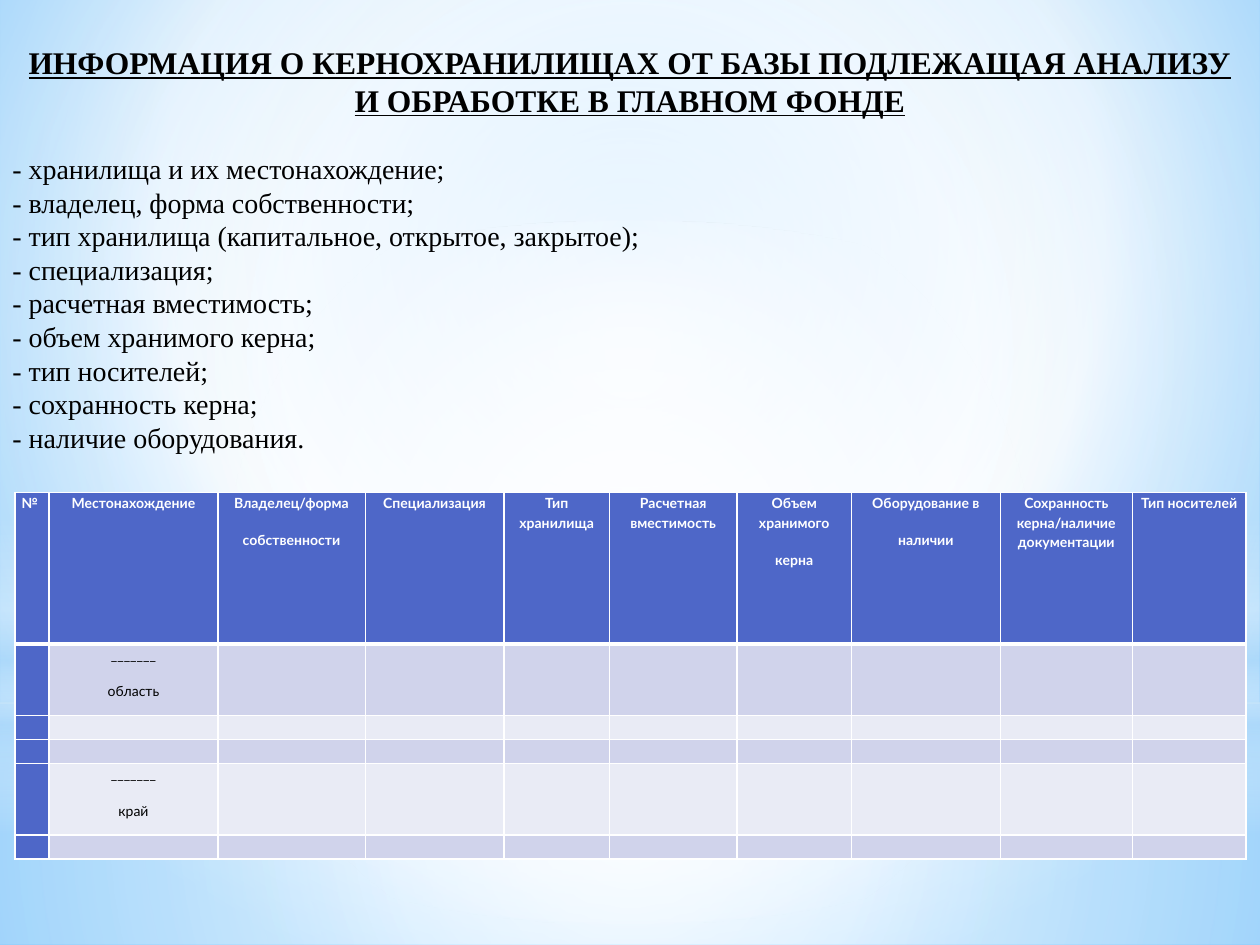
from dataclasses import dataclass

from lxml import etree
from pptx import Presentation
from pptx import util as u
from pptx.dml.color import RGBColor
from pptx.enum import shapes, text
from pptx.oxml.ns import qn


@dataclass(frozen=True)
class Theme:
    heading_font: str = "Times New Roman"
    table_font: str = "Lato"
    heading_size: int = 18
    list_size: int = 16
    table_size: int = 8
    ink: str = "000000"
    white: str = "FFFFFF"
    header: str = "4E67C8"
    bands: tuple = ("D0D3EB", "E9EBF5")
    haze: str = "B4DCFA"
    sky: str = "9ED5FF"
    deep_sky: str = "5BB9FF"


THEME = Theme()
CENTRE = (50, 50, 50, 50)

HEADING = "ИНФОРМАЦИЯ О КЕРНОХРАНИЛИЩАХ ОТ БАЗЫ ПОДЛЕЖАЩАЯ АНАЛИЗУ И ОБРАБОТКЕ В ГЛАВНОМ ФОНДЕ"
REQUIREMENTS = [
    "- хранилища и их местонахождение;",
    "- владелец, форма собственности;",
    "- тип хранилища (капитальное, открытое, закрытое);",
    "- специализация;",
    "- расчетная вместимость;",
    "- объем хранимого керна;",
    "- тип носителей;",
    "- сохранность керна;",
    "- наличие оборудования.",
]
COLUMNS = [
    ("№", 0.27),
    ("Местонахождение", 1.34),
    ("Владелец/форма\nсобственности", 1.17),
    ("Специализация", 1.1),
    ("Тип хранилища", 0.84),
    ("Расчетная вместимость", 1.01),
    ("Объем хранимого\nкерна", 0.91),
    ("Оборудование в\nналичии", 1.18),
    ("Сохранность керна/наличие документации", 1.05),
    ("Тип носителей", 0.9),
]
REGIONS = ["_______\nобласть", "", "", "_______\nкрай", ""]
HEADER_HEIGHT, REGION_HEIGHT, EMPTY_HEIGHT = 1.2, 0.57, 0.19


def paint_gradient(owner, stops, focus=None):
    gradient = etree.Element(qn("a:gradFill"), rotWithShape="1")
    stop_list = etree.SubElement(gradient, qn("a:gsLst"))
    for position, color, opacity in stops:
        stop = etree.SubElement(stop_list, qn("a:gs"), pos=str(position * 1000))
        tone = etree.SubElement(stop, qn("a:srgbClr"), val=color)
        if opacity < 100:
            etree.SubElement(tone, qn("a:alpha"), val=str(opacity * 1000))
    if focus:
        circle = etree.SubElement(gradient, qn("a:path"), path="circle")
        sides = {side: str(share * 1000) for side, share in zip("ltrb", focus)}
        etree.SubElement(circle, qn("a:fillToRect"), **sides)
    else:
        etree.SubElement(gradient, qn("a:lin"), ang="5400000", scaled="0")
    solid = owner.find(".//" + qn("a:solidFill"))
    solid.getparent().replace(solid, gradient)


def add_glow(slide, kind, top, height, stops, focus=None):
    glow = slide.shapes.add_shape(kind, 0, u.Inches(top), u.Inches(10), u.Inches(height))
    glow.shadow.inherit = False
    glow.fill.solid()
    glow.fill.fore_color.rgb = RGBColor.from_string(THEME.white)
    paint_gradient(glow._element.spPr, stops, focus)
    glow.line.fill.background()


def paint_sky(slide):
    white, haze = THEME.white, THEME.haze
    rectangle, ellipse = shapes.MSO_SHAPE.RECTANGLE, shapes.MSO_SHAPE.OVAL
    backdrop = slide.background.fill
    backdrop.solid()
    backdrop.fore_color.rgb = RGBColor.from_string(white)
    paint_gradient(
        slide._element,
        [(0, THEME.sky, 100), (60, white, 100), (100, THEME.deep_sky, 100)],
        (20, 10, 20, 60),
    )
    add_glow(slide, rectangle, 5.58, 1.92,
             [(0, white, 91), (37, white, 76), (100, haze, 79)], CENTRE)
    add_glow(slide, rectangle, 0, 5.58,
             [(0, white, 89), (48, white, 62), (100, haze, 79)], CENTRE)
    add_glow(slide, rectangle, 4.12, 2.5,
             [(0, white, 0), (29, white, 30), (45, haze, 40),
              (55, white, 26), (65, haze, 60), (100, white, 0)])
    add_glow(slide, ellipse, 1.75, 5.58, [(0, white, 100), (56, white, 0)], CENTRE)


def style_font(paragraph, name, size, color, bold=False):
    font = paragraph.font
    font.name = name
    font.size = u.Pt(size)
    font.bold = bold
    font.color.rgb = RGBColor.from_string(color)


def add_requirements(slide):
    box = slide.shapes.add_textbox(0, u.Inches(0.03), u.Inches(10), u.Inches(3.94))
    frame = box.text_frame
    frame.word_wrap = True
    frame.margin_top = u.Inches(0.31)
    frame.text = "\n".join([HEADING, *REQUIREMENTS])
    heading, *requirements = frame.paragraphs
    style_font(heading, THEME.heading_font, THEME.heading_size, THEME.ink, bold=True)
    heading.font.underline = True
    heading.alignment = text.PP_ALIGN.CENTER
    heading.space_after = u.Pt(19)
    for requirement in requirements:
        style_font(requirement, THEME.heading_font, THEME.list_size, THEME.ink)


def draw_borders(cell, widths):
    properties = cell._tc.get_or_add_tcPr()
    for order, (side, width) in enumerate(zip("LRTB", widths)):
        border = etree.Element(qn(f"a:ln{side}"), w=str(u.Pt(width)))
        fill = etree.SubElement(border, qn("a:solidFill"))
        etree.SubElement(fill, qn("a:srgbClr"), val=THEME.white)
        properties.insert(order, border)


def fill_cell(cell, words, fill, color, bold, alignment, borders):
    cell.text = words
    cell.margin_left = cell.margin_right = u.Inches(0.05)
    cell.margin_top = cell.margin_bottom = 0
    cell.fill.solid()
    cell.fill.fore_color.rgb = RGBColor.from_string(fill)
    for paragraph in cell.text_frame.paragraphs:
        style_font(paragraph, THEME.table_font, THEME.table_size, color, bold)
        paragraph.alignment = alignment
        paragraph.line_spacing = 1.15
        paragraph.space_after = u.Pt(10 if words else 0)
    draw_borders(cell, borders)


def add_storage_table(slide):
    heights = [HEADER_HEIGHT] + [REGION_HEIGHT if name else EMPTY_HEIGHT for name in REGIONS]
    storage = slide.shapes.add_table(
        len(heights), len(COLUMNS), u.Inches(0.12), u.Inches(3.91),
        u.Inches(9.76), u.Inches(sum(heights)),
    ).table
    for row, height in zip(storage.rows, heights):
        row.height = u.Inches(height)
    for index, (title, width) in enumerate(COLUMNS):
        storage.columns[index].width = u.Inches(width)
        alignment = text.PP_ALIGN.CENTER if index else text.PP_ALIGN.LEFT
        fill_cell(storage.cell(0, index), title, THEME.header, THEME.white, True,
                  alignment, (1, 1, 1, 3))
        for number, region in enumerate(REGIONS):
            fill = THEME.bands[number % 2] if index else THEME.header
            fill_cell(storage.cell(number + 1, index), region if index == 1 else "", fill,
                      THEME.ink, False, alignment, (1, 1, 1 if number else 3, 1))


def main():
    deck = Presentation()
    deck.slide_width, deck.slide_height = u.Inches(10), u.Inches(7.5)
    slide = deck.slides.add_slide(deck.slide_layouts[6])
    paint_sky(slide)
    add_requirements(slide)
    add_storage_table(slide)
    deck.save("out.pptx")


if __name__ == "__main__":
    main()
